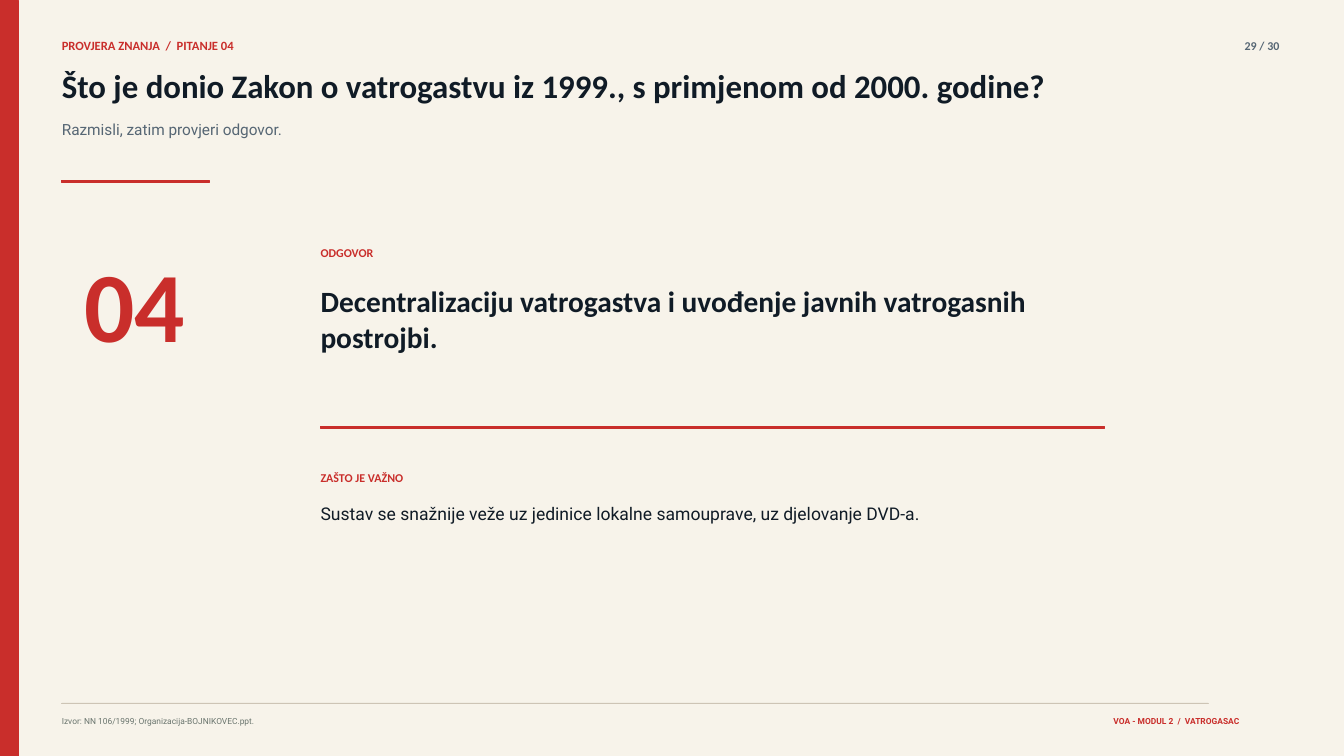
from pptx import Presentation
from pptx.dml.color import RGBColor
from pptx.enum.shapes import MSO_SHAPE
from pptx.enum.text import MSO_ANCHOR, MSO_AUTO_SIZE, PP_ALIGN
from pptx.util import Inches, Pt

RED = RGBColor(0xC9, 0x2E, 0x2B)
INK = RGBColor(0x10, 0x1B, 0x26)
SLATE = RGBColor(0x56, 0x66, 0x74)
MOSS = RGBColor(0x6A, 0x75, 0x6E)
SAND = RGBColor(0xCD, 0xC4, 0xB5)
CREAM = RGBColor(0xF7, 0xF3, 0xEA)

SLIDE_WIDTH, SLIDE_HEIGHT = 20, 11.25
MARGIN = 0.92
ANSWER_LEFT, ANSWER_WIDTH = 4.77, 11.67
FOOTER_TOP = 10.65

FORMATS = {
    "kicker": {"name": "Calibri", "size": Pt(13.5), "bold": True, "color": RED},
    "page": {"name": "Calibri", "size": Pt(12.8), "bold": True, "color": SLATE},
    "title": {"name": "Calibri", "size": Pt(35.2), "bold": True, "color": INK},
    "subtitle": {"name": "Roboto", "size": Pt(16.5), "bold": False, "color": SLATE},
    "source": {"name": "Roboto", "size": Pt(9), "bold": False, "color": MOSS},
    "module": {"name": "Roboto", "size": Pt(9), "bold": True, "color": RED},
    "number": {"name": "Calibri", "size": Pt(106.5), "bold": True, "color": RED},
    "label": {"name": "Calibri", "size": Pt(12.8), "bold": True, "color": RED},
    "answer": {"name": "Calibri", "size": Pt(31.5), "bold": True, "color": INK},
    "reason": {"name": "Roboto", "size": Pt(18.8), "bold": False, "color": INK},
}
RIGHT_ALIGNED = {"page", "module"}

TITLE = "Što je donio Zakon o vatrogastvu iz 1999., s primjenom od 2000. godine?"
TITLE_BOX = (MARGIN, 0.98, 18.12, 0.62)

# format, text, (left, top, width, height)
TEXTS = [
    ("kicker", "PROVJERA ZNANJA  /  PITANJE 04", (MARGIN, 0.56, 12.81, 0.23)),
    ("page", "29 / 30", (17.48, 0.57, 1.56, 0.21)),
    ("subtitle", "Razmisli, zatim provjeri odgovor.", (MARGIN, 1.78, 3.29, 0.71)),
    ("source", "Izvor: NN 106/1999; Organizacija-BOJNIKOVEC.ppt.",
     (MARGIN, FOOTER_TOP, 14.17, 0.16)),
    ("module", "VOA - MODUL 2  /  VATROGASAC", (15.42, FOOTER_TOP, 3.02, 0.16)),
    ("number", "04", (1.25, 3.62, 2.19, 1.78)),
    ("label", "ODGOVOR", (ANSWER_LEFT, 3.65, 2.92, 0.22)),
    ("answer", "Decentralizaciju vatrogastva i uvođenje javnih vatrogasnih postrojbi.",
     (ANSWER_LEFT, 4.22, ANSWER_WIDTH, 1.16)),
    ("label", "ZAŠTO JE VAŽNO", (ANSWER_LEFT, 7, 3.33, 0.22)),
    ("reason", "Sustav se snažnije veže uz jedinice lokalne samouprave, uz djelovanje DVD-a.",
     (ANSWER_LEFT, 7.48, ANSWER_WIDTH, 0.41)),
]

# colour, (left, top, width, height)
BARS = [
    (RED, (0, 0, 0.27, SLIDE_HEIGHT)),
    (RED, (MARGIN, 2.68, 2.19, 0.04)),
    (SAND, (MARGIN, 10.46, 17.06, 0.01)),
    (RED, (ANSWER_LEFT, 6.35, ANSWER_WIDTH, 0.02)),
]


def inches(box):
    return [Inches(value) for value in box]


def add_bar(slide, color, box):
    shape = slide.shapes.add_shape(MSO_SHAPE.RECTANGLE, *inches(box))
    shape.shadow.inherit = False
    shape.fill.solid()
    shape.fill.fore_color.rgb = color
    shape.line.color.rgb = color
    shape.line.width = Pt(0)


def write_text(shape, format_name, text):
    frame = shape.text_frame
    frame.text = text
    frame.word_wrap = True
    frame.auto_size = MSO_AUTO_SIZE.NONE
    frame.vertical_anchor = MSO_ANCHOR.TOP
    for side in ("left", "top", "right", "bottom"):
        setattr(frame, f"margin_{side}", 0)
    paragraph = frame.paragraphs[0]
    paragraph.alignment = PP_ALIGN.RIGHT if format_name in RIGHT_ALIGNED else PP_ALIGN.LEFT
    font = paragraph.runs[0].font
    for attribute, value in FORMATS[format_name].items():
        if attribute == "color":
            font.color.rgb = value
        else:
            setattr(font, attribute, value)


def main():
    presentation = Presentation()
    presentation.slide_width = Inches(SLIDE_WIDTH)
    presentation.slide_height = Inches(SLIDE_HEIGHT)
    title_only = presentation.slide_layouts[5]
    slide = presentation.slides.add_slide(title_only)
    slide.background.fill.solid()
    slide.background.fill.fore_color.rgb = CREAM

    title = slide.shapes.title
    title.left, title.top, title.width, title.height = inches(TITLE_BOX)
    write_text(title, "title", TITLE)
    for color, box in BARS:
        add_bar(slide, color, box)
    for format_name, text, box in TEXTS:
        write_text(slide.shapes.add_textbox(*inches(box)), format_name, text)

    presentation.save("out.pptx")


if __name__ == "__main__":
    main()
